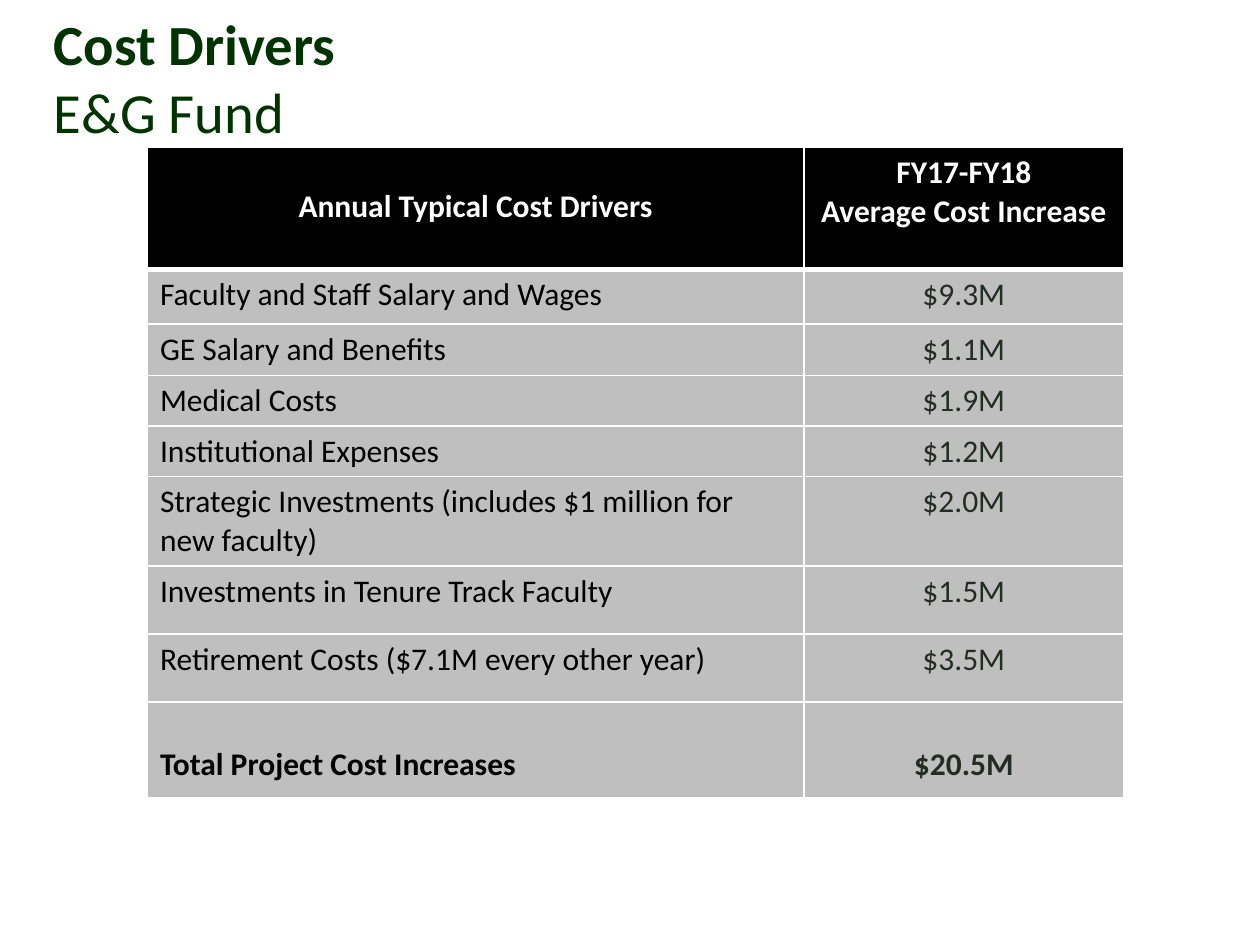
from dataclasses import dataclass

from lxml import etree
from pptx import Presentation
from pptx import util as u
from pptx.dml.color import RGBColor
from pptx.enum import text
from pptx.oxml.ns import qn


@dataclass(frozen=True)
class Theme:
    font: str = "Calibri"
    green: str = "003300"
    black: str = "000000"
    white: str = "FFFFFF"
    gray: str = "BFBFBF"
    amount: str = "232D23"
    title_size: float = 32.4
    table_size: float = 18


THEME = Theme()
LEFT, CENTER = text.PP_ALIGN.LEFT, text.PP_ALIGN.CENTER

HEADERS = ["Annual Typical Cost Drivers", "FY17-FY18\nAverage Cost Increase"]
DRIVERS = [
    ("Faculty and Staff Salary and Wages", "$9.3M"),
    ("GE Salary and Benefits", "$1.1M"),
    ("Medical Costs", "$1.9M"),
    ("Institutional Expenses", "$1.2M"),
    ("Strategic Investments (includes $1 million for new faculty)", "$2.0M"),
    ("Investments in Tenure Track Faculty", "$1.5M"),
    ("Retirement Costs ($7.1M every other year)", "$3.5M"),
]
TOTAL = ("Total Project Cost Increases", "$20.5M")
COLUMN_WIDTHS = [5.21, 2.54]
ROW_HEIGHTS = [0.97, 0.43, 0.41, 0.4, 0.4, 0.71, 0.54, 0.54, 0.76]


def style_font(font, color, **values):
    for name, value in {"name": THEME.font, **values}.items():
        setattr(font, name, value)
    font.color.rgb = RGBColor.from_string(color)


def add_title(slide, heading, subject):
    box = slide.shapes.add_textbox(
        u.Inches(0.33), u.Inches(0), u.Inches(9.42), u.Inches(1.22))
    frame = box.text_frame
    frame.word_wrap = True
    frame.vertical_anchor = text.MSO_ANCHOR.MIDDLE
    para = frame.paragraphs[0]
    for words, bold in ((heading, True), (subject, False)):
        if not bold:
            para.add_line_break()
        span = para.add_run()
        span.text = words
        style_font(span.font, THEME.green, size=u.Pt(THEME.title_size), bold=bold)


def set_borders(cell, **widths):
    """Draw white borders with the given widths in points, keyed by side."""
    properties = cell._tc.get_or_add_tcPr()
    for position, (side, width) in enumerate(widths.items()):
        line = etree.Element(qn(f"a:ln{side}"), w=str(u.Pt(width)))
        fill = etree.SubElement(line, qn("a:solidFill"))
        etree.SubElement(fill, qn("a:srgbClr"), val=THEME.white)
        properties.insert(position, line)


def fill_cell(cell, words, fill, color, align, bold=False, top=0.05):
    cell.fill.solid()
    cell.fill.fore_color.rgb = RGBColor.from_string(fill)
    cell.margin_top = u.Inches(top)
    cell.text = words
    for para in cell.text_frame.paragraphs:
        para.alignment = align
        for span in para.runs:
            style_font(span.font, color, size=u.Pt(THEME.table_size), bold=bold)


def add_cost_table(slide):
    rows = [HEADERS, *DRIVERS, TOTAL]
    table = slide.shapes.add_table(
        len(rows), len(COLUMN_WIDTHS), u.Inches(1.17), u.Inches(1.17),
        u.Inches(sum(COLUMN_WIDTHS)), u.Inches(sum(ROW_HEIGHTS))).table
    for column, width in zip(table.columns, COLUMN_WIDTHS):
        column.width = u.Inches(width)
    for row, height in zip(table.rows, ROW_HEIGHTS):
        row.height = u.Inches(height)

    for column, words in enumerate(HEADERS):
        fill_cell(table.cell(0, column), words, THEME.black, THEME.white,
                  CENTER, bold=True, top=0.05 if column else 0.32)
    for index, (driver, amount) in enumerate(rows[1:], start=1):
        is_total = index == len(rows) - 1
        options = {"bold": is_total, "top": 0.35 if is_total else 0.05}
        fill_cell(table.cell(index, 0), driver, THEME.gray, THEME.black, LEFT, **options)
        fill_cell(table.cell(index, 1), amount, THEME.gray, THEME.amount, CENTER, **options)

    for index in range(len(rows)):
        for column in range(len(COLUMN_WIDTHS)):
            set_borders(table.cell(index, column), L=1, R=1,
                        T=3 if index == 1 else 1, B=3 if index == 0 else 1)


def main():
    deck = Presentation()
    deck.slide_width, deck.slide_height = u.Inches(10), u.Inches(7.5)
    slide = deck.slides.add_slide(deck.slide_layouts[6])
    add_title(slide, "Cost Drivers", "E&G Fund")
    add_cost_table(slide)
    deck.save("out.pptx")


if __name__ == "__main__":
    main()
